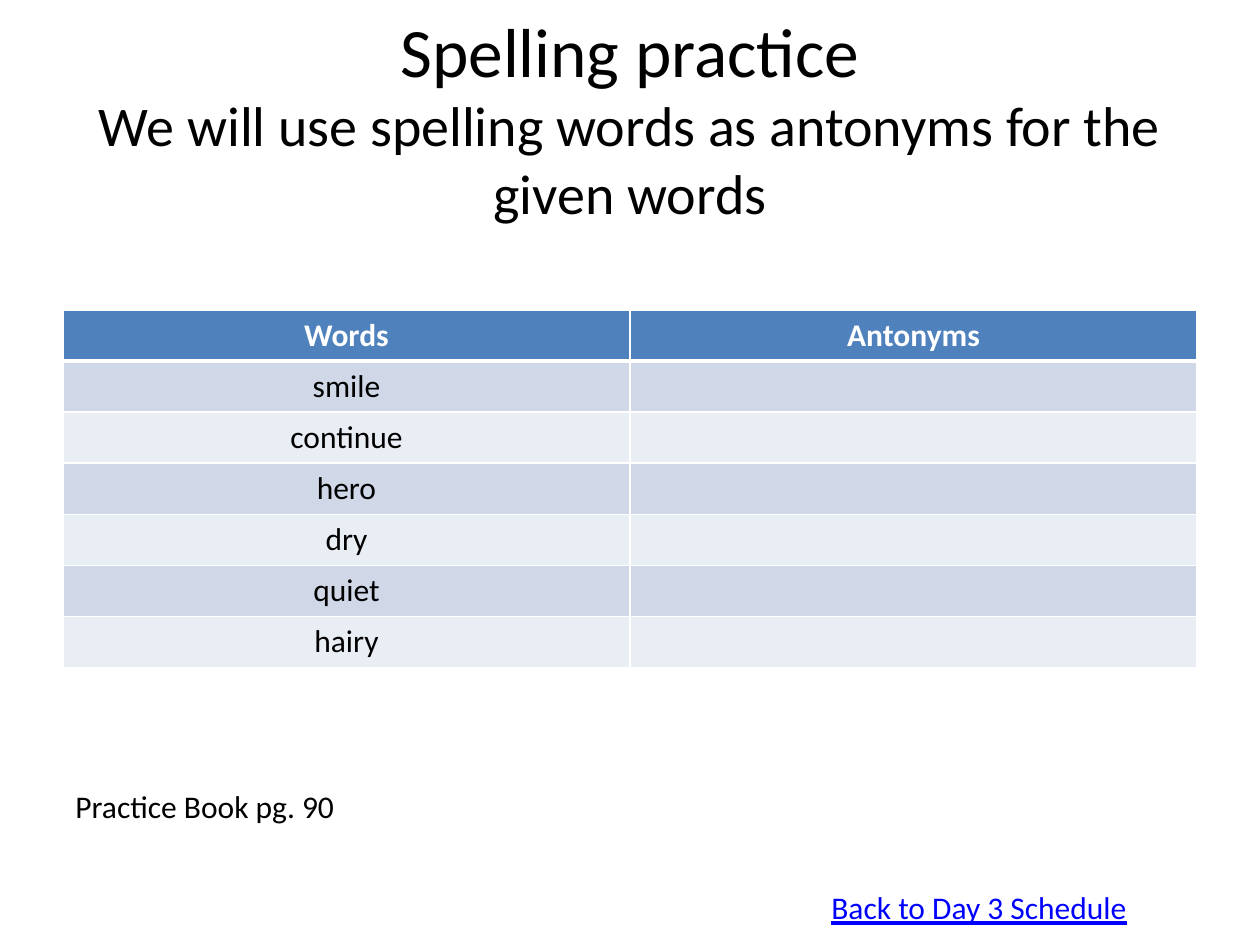
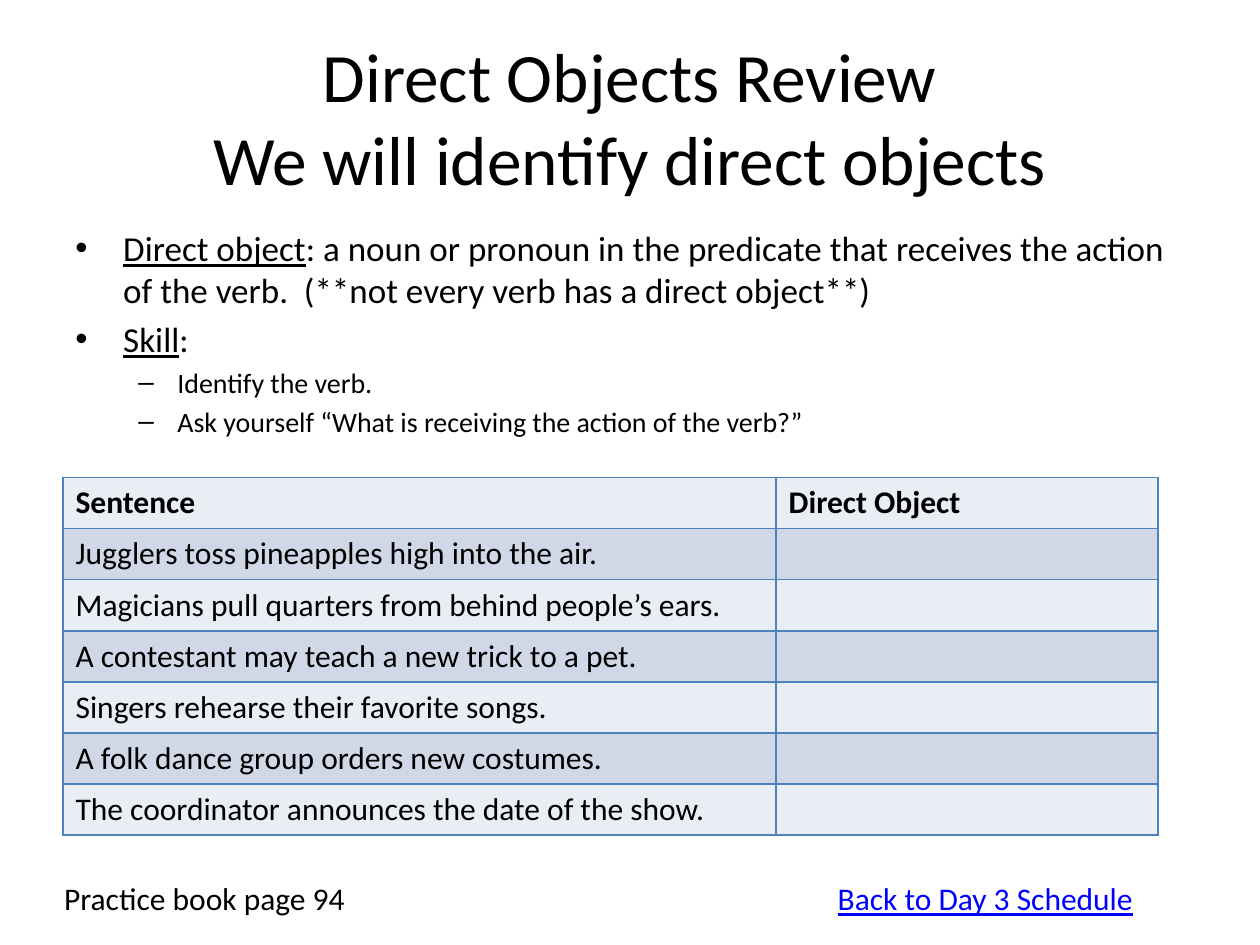
from dataclasses import dataclass

from lxml import etree
from pptx import Presentation
from pptx import util as u
from pptx.dml.color import RGBColor
from pptx.enum import text
from pptx.oxml.ns import qn

BLACK = RGBColor(0x00, 0x00, 0x00)
WHITE = RGBColor(0xFF, 0xFF, 0xFF)
BLUE = RGBColor(0x4F, 0x81, 0xBD)
LINK = RGBColor(0x00, 0x00, 0xFF)
DARK_BAND = RGBColor(0xD0, 0xD8, 0xE8)
LIGHT_BAND = RGBColor(0xE9, 0xED, 0xF4)

FONT = "Calibri"
TITLE_SIZE = 39.6
LABEL_SIZE = 18
TABLE_HEIGHT = 2.84
BORDER_TAGS = ("a:lnL", "a:lnR", "a:lnT", "a:lnB")


@dataclass(frozen=True)
class Span:
    words: str
    size: float = LABEL_SIZE
    color: RGBColor = BLACK
    bold: bool = False
    underline: bool = False


@dataclass(frozen=True)
class Bullet:
    spans: tuple[Span, ...]
    level: int = 0


@dataclass(frozen=True)
class BulletStyle:
    mark: str
    margin: float
    hanging: float
    space_before: float


@dataclass(frozen=True)
class Label:
    span: Span
    left: float
    top: float
    width: float


@dataclass(frozen=True)
class Grid:
    header: tuple[str, str]
    entries: tuple[str, ...]
    top: float
    widths: tuple[float, float]
    align: text.PP_ALIGN
    header_fill: RGBColor
    header_color: RGBColor
    border: RGBColor
    header_rule: float


BULLET_STYLES = (
    BulletStyle("•", 0.38, 0.38, 4),
    BulletStyle("–", 0.81, 0.31, 3.2),
)


def write_span(para, span: Span) -> None:
    run = para.add_run()
    run.text = span.words
    values = {
        "name": FONT,
        "size": u.Pt(span.size),
        "bold": span.bold,
        "underline": span.underline,
    }
    for name, value in values.items():
        setattr(run.font, name, value)
    run.font.color.rgb = span.color


def add_frame(page, left: float, top: float, width: float, height: float, **values):
    box = page.shapes.add_textbox(
        u.Inches(left), u.Inches(top), u.Inches(width), u.Inches(height)
    )
    for name, value in values.items():
        setattr(box.text_frame, name, value)
    return box.text_frame


def add_title(page, spans: tuple[Span, ...]) -> None:
    frame = add_frame(
        page, 0.5, 0.3, 9, 1.25,
        word_wrap=True, vertical_anchor=text.MSO_ANCHOR.MIDDLE,
    )
    para = frame.paragraphs[0]
    para.alignment = text.PP_ALIGN.CENTER
    for index, span in enumerate(spans):
        if index:
            para.add_line_break()
        write_span(para, span)


def add_label(page, label: Label) -> None:
    frame = add_frame(
        page, label.left, label.top, label.width, 0.4,
        word_wrap=False, auto_size=text.MSO_AUTO_SIZE.SHAPE_TO_FIT_TEXT,
    )
    write_span(frame.paragraphs[0], label.span)


def add_bullets(page, bullets: tuple[Bullet, ...]) -> None:
    frame = add_frame(page, 0.5, 1.75, 9, 4.95, word_wrap=True)
    for index, bullet in enumerate(bullets):
        para = frame.add_paragraph() if index else frame.paragraphs[0]
        style = BULLET_STYLES[bullet.level]
        para.level = bullet.level
        if index:
            para.space_before = u.Pt(style.space_before)
        props = para._p.get_or_add_pPr()
        props.set("marL", str(u.Inches(style.margin)))
        props.set("indent", str(-u.Inches(style.hanging)))
        etree.SubElement(props, qn("a:buFont")).set("typeface", "Arial")
        etree.SubElement(props, qn("a:buChar")).set("char", style.mark)
        for span in bullet.spans:
            write_span(para, span)


def set_borders(cell, color: RGBColor, widths: dict[str, float]) -> None:
    props = cell._tc.get_or_add_tcPr()
    for index, tag in enumerate(BORDER_TAGS):
        line = etree.Element(qn(tag), w=str(u.Pt(widths.get(tag, 1))))
        fill = etree.SubElement(line, qn("a:solidFill"))
        etree.SubElement(fill, qn("a:srgbClr"), val=str(color))
        props.insert(index, line)


def add_grid(page, grid: Grid) -> None:
    rows = (grid.header, *((entry, "") for entry in grid.entries))
    table = page.shapes.add_table(
        len(rows), len(grid.widths), u.Inches(0.5), u.Inches(grid.top),
        u.Inches(sum(grid.widths)), u.Inches(TABLE_HEIGHT),
    ).table
    for column, width in zip(table.columns, grid.widths):
        column.width = u.Inches(width)
    for row_index, row in enumerate(rows):
        is_header = row_index == 0
        band = DARK_BAND if row_index % 2 else LIGHT_BAND
        rules = {}
        if is_header:
            rules["a:lnB"] = grid.header_rule
        elif row_index == 1:
            rules["a:lnT"] = grid.header_rule
        for column_index, words in enumerate(row):
            cell = table.cell(row_index, column_index)
            cell.fill.solid()
            cell.fill.fore_color.rgb = grid.header_fill if is_header else band
            set_borders(cell, grid.border, rules)
            if words:
                para = cell.text_frame.paragraphs[0]
                para.alignment = grid.align
                color = grid.header_color if is_header else BLACK
                write_span(para, Span(words, color=color, bold=is_header))


def add_back_label(page, left: float, top: float) -> None:
    span = Span("Back to Day 3 Schedule", color=LINK, underline=True)
    add_label(page, Label(span, left, top, 2.9))


def build_spelling(page) -> None:
    add_title(page, (
        Span("Spelling practice", TITLE_SIZE),
        Span("We will use spelling words as antonyms for the given words", 32),
    ))
    add_grid(page, Grid(
        header=("Words", "Antonyms"),
        entries=("smile", "continue", "hero", "dry", "quiet", "hairy"),
        top=2.46,
        widths=(4.5, 4.5),
        align=text.PP_ALIGN.CENTER,
        header_fill=BLUE,
        header_color=WHITE,
        border=WHITE,
        header_rule=3,
    ))
    add_label(page, Label(Span("Practice Book pg. 90"), 0.5, 6.2, 2.53))
    add_back_label(page, 6.5, 7)


def build_direct_objects(page) -> None:
    add_title(page, (
        Span("Direct Objects Review", TITLE_SIZE),
        Span("We will identify direct objects", TITLE_SIZE),
    ))
    definition = (
        ": a noun or pronoun in the predicate that receives the action "
        "of the verb.  (**not every verb has a direct object**)"
    )
    question = "Ask yourself “What is receiving the action of the verb?”"
    add_bullets(page, (
        Bullet((Span("Direct object", 20, underline=True), Span(definition, 20))),
        Bullet((Span("Skill", 20, underline=True), Span(":", 20))),
        Bullet((Span("Identify the verb.", 16),), 1),
        Bullet((Span(question, 16),), 1),
    ))
    add_grid(page, Grid(
        header=("Sentence", "Direct Object"),
        entries=(
            "Jugglers toss pineapples high into the air.",
            "Magicians pull quarters from behind people’s ears.",
            "A contestant may teach a new trick to a pet.",
            "Singers rehearse their favorite songs.",
            "A folk dance group orders new costumes.",
            "The coordinator announces the date of the show.",
        ),
        top=3.79,
        widths=(5.66, 3.03),
        align=text.PP_ALIGN.LEFT,
        header_fill=LIGHT_BAND,
        header_color=BLACK,
        border=BLUE,
        header_rule=1,
    ))
    add_label(page, Label(Span("Practice book page 94"), 0.41, 6.93, 2.71))
    add_back_label(page, 6.55, 6.93)


def main() -> None:
    deck = Presentation()
    deck.slide_width = u.Inches(10)
    deck.slide_height = u.Inches(7.5)
    for build in (build_spelling, build_direct_objects):
        build(deck.slides.add_slide(deck.slide_layouts[6]))
    deck.save("out.pptx")


if __name__ == "__main__":
    main()
